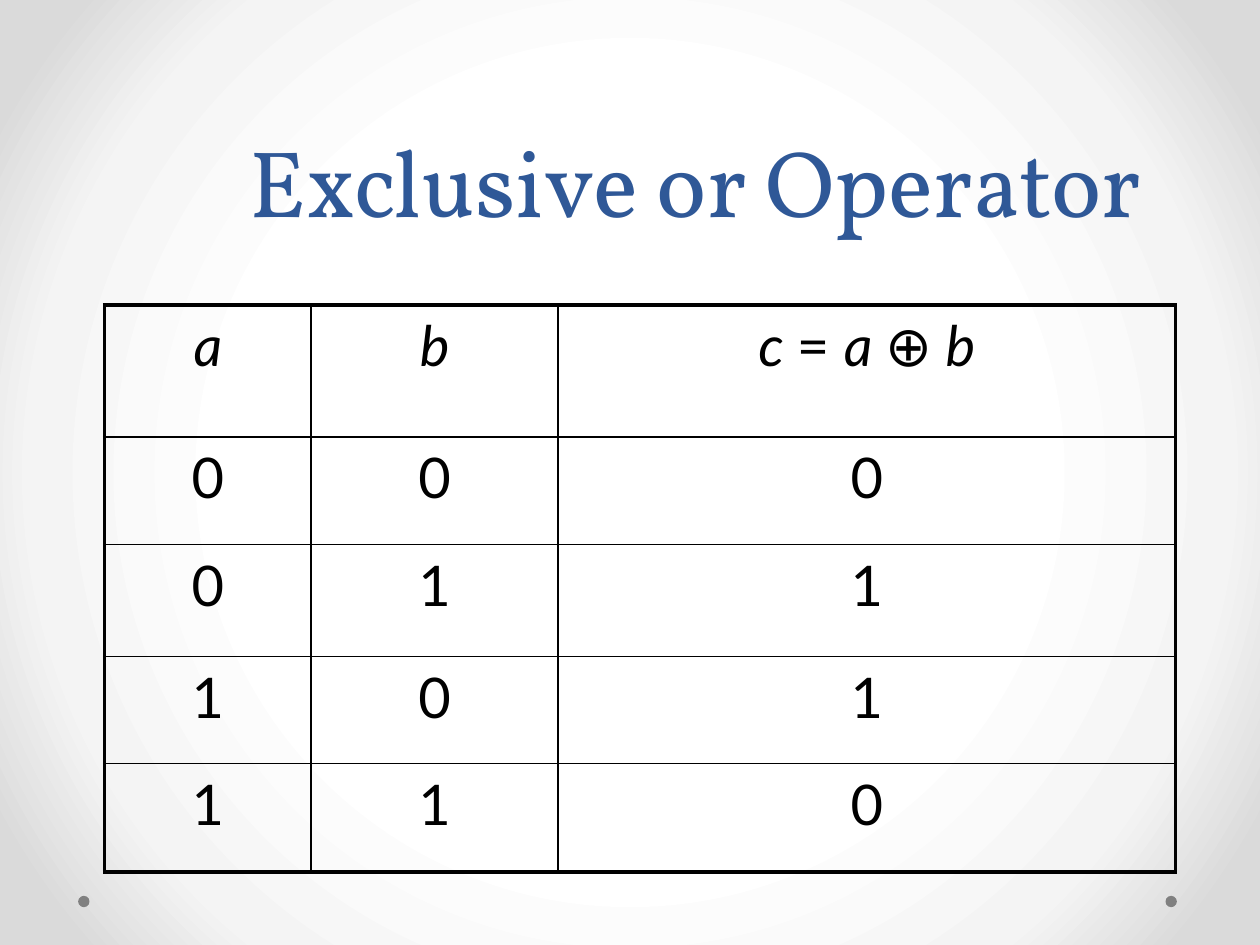
from dataclasses import dataclass

from lxml import etree
from pptx import Presentation
from pptx import util as u
from pptx.dml.color import RGBColor
from pptx.enum import shapes, text
from pptx.oxml.ns import qn


@dataclass(frozen=True)
class Theme:
    title_font: str = "Vollkorn"
    body_font: str = "Lato"
    title_color: str = "2F5897"
    ink: str = "000000"
    dot: str = "808080"
    backdrop: tuple = ((50, "FFFFFF"), (76, "F4F4F4"), (92, "DADADA"))
    title_size: int = 54
    title_leading: int = 58
    body_size: int = 32
    body_space: float = 6.4
    outer_line: float = 2.25
    inner_line: float = 1


class SlideBuilder:
    def __init__(self, slide, theme):
        self.slide = slide
        self.theme = theme

    def background(self):
        """Fill the slide with a circular gradient spreading from its centre."""
        fill = self.slide.background.fill
        fill.gradient()
        gradient = self.slide.element.find(".//" + qn("a:gradFill"))
        for child in list(gradient):
            gradient.remove(child)
        stops = etree.SubElement(gradient, qn("a:gsLst"))
        for position, color in self.theme.backdrop:
            stop = etree.SubElement(stops, qn("a:gs"), pos=str(position * 1000))
            etree.SubElement(stop, qn("a:srgbClr"), val=color)
        circle = etree.SubElement(gradient, qn("a:path"), path="circle")
        etree.SubElement(circle, qn("a:fillToRect"),
                         {side: "50000" for side in "ltrb"})

    def dot(self, left, top, size):
        dot = self.slide.shapes.add_shape(
            shapes.MSO_SHAPE.OVAL, *map(u.Inches, (left, top, size, size)))
        dot.shadow.inherit = False
        dot.fill.solid()
        dot.fill.fore_color.rgb = RGBColor.from_string(self.theme.dot)
        dot.line.fill.background()

    def title(self, wording, left, top, width, height):
        box = self.slide.shapes.title
        box.left, box.top, box.width, box.height = map(
            u.Inches, (left, top, width, height))
        frame = box.text_frame
        frame.text = wording
        frame.word_wrap = True
        frame.auto_size = text.MSO_AUTO_SIZE.NONE
        frame.vertical_anchor = text.MSO_ANCHOR.BOTTOM
        para = frame.paragraphs[0]
        para.alignment = text.PP_ALIGN.CENTER
        para.line_spacing = u.Pt(self.theme.title_leading)
        self.style(para.font, self.theme.title_font, self.theme.title_size,
                   self.theme.title_color)

    def table(self, rows, left, top, widths, heights):
        """Add a grid; each cell is a list of (wording, italic) spans."""
        table = self.slide.shapes.add_table(
            len(heights), len(widths), u.Inches(left), u.Inches(top),
            u.Inches(sum(widths)), u.Inches(sum(heights))).table
        table.first_row = table.horz_banding = False
        for column, width in zip(table.columns, widths):
            column.width = u.Inches(width)
        for row, height in zip(table.rows, heights):
            row.height = u.Inches(height)
        last_row, last_column = len(heights) - 1, len(widths) - 1
        for r, row in enumerate(rows):
            for c, spans in enumerate(row):
                cell = table.cell(r, c)
                self.cell_text(cell, spans)
                self.cell_borders(cell, lnL=c == 0, lnR=c == last_column,
                                  lnT=r == 0, lnB=r == last_row)
                cell.fill.background()

    def cell_text(self, cell, spans):
        para = cell.text_frame.paragraphs[0]
        para.alignment = text.PP_ALIGN.CENTER
        para.space_before = u.Pt(self.theme.body_space)
        self.style(para.font, self.theme.body_font, self.theme.body_size,
                   self.theme.ink)
        for wording, italic in spans:
            span = para.add_run()
            span.text = wording
            span.font.italic = italic

    def cell_borders(self, cell, **sides):
        """Draw each side, heavier where it lies on the table's outer edge."""
        properties = cell._tc.get_or_add_tcPr()
        for side, is_outer in sides.items():
            weight = self.theme.outer_line if is_outer else self.theme.inner_line
            line = etree.SubElement(properties, qn("a:" + side),
                                    w=str(int(u.Pt(weight))))
            fill = etree.SubElement(line, qn("a:solidFill"))
            etree.SubElement(fill, qn("a:srgbClr"), val=self.theme.ink)

    @staticmethod
    def style(font, name, size, color):
        font.name = name
        font.size = u.Pt(size)
        font.color.rgb = RGBColor.from_string(color)


def main():
    deck = Presentation()
    deck.slide_width, deck.slide_height = u.Inches(10), u.Inches(7.5)
    title_only = deck.slide_layouts[5]
    page = SlideBuilder(deck.slides.add_slide(title_only), Theme())

    page.background()
    for left in (9.25, 0.62):
        page.dot(left, 7.11, 0.09)
    page.title("Exclusive or Operator", 1.26, 0.68, 8.52, 1.25)

    header = [
        [("a", True)],
        [("b", True)],
        [("c ", True), ("= ", False), ("a ", True), ("⊕", False), (" b", True)],
    ]
    truth_rows = [[[(str(bit), False)] for bit in (a, b, a ^ b)]
                  for a in (0, 1) for b in (0, 1)]
    page.table([header] + truth_rows, 0.83, 2.42,
               widths=(1.64, 1.96, 4.9),
               heights=(1.05, 0.85, 0.89, 0.85, 0.86))
    deck.save("out.pptx")


if __name__ == "__main__":
    main()
